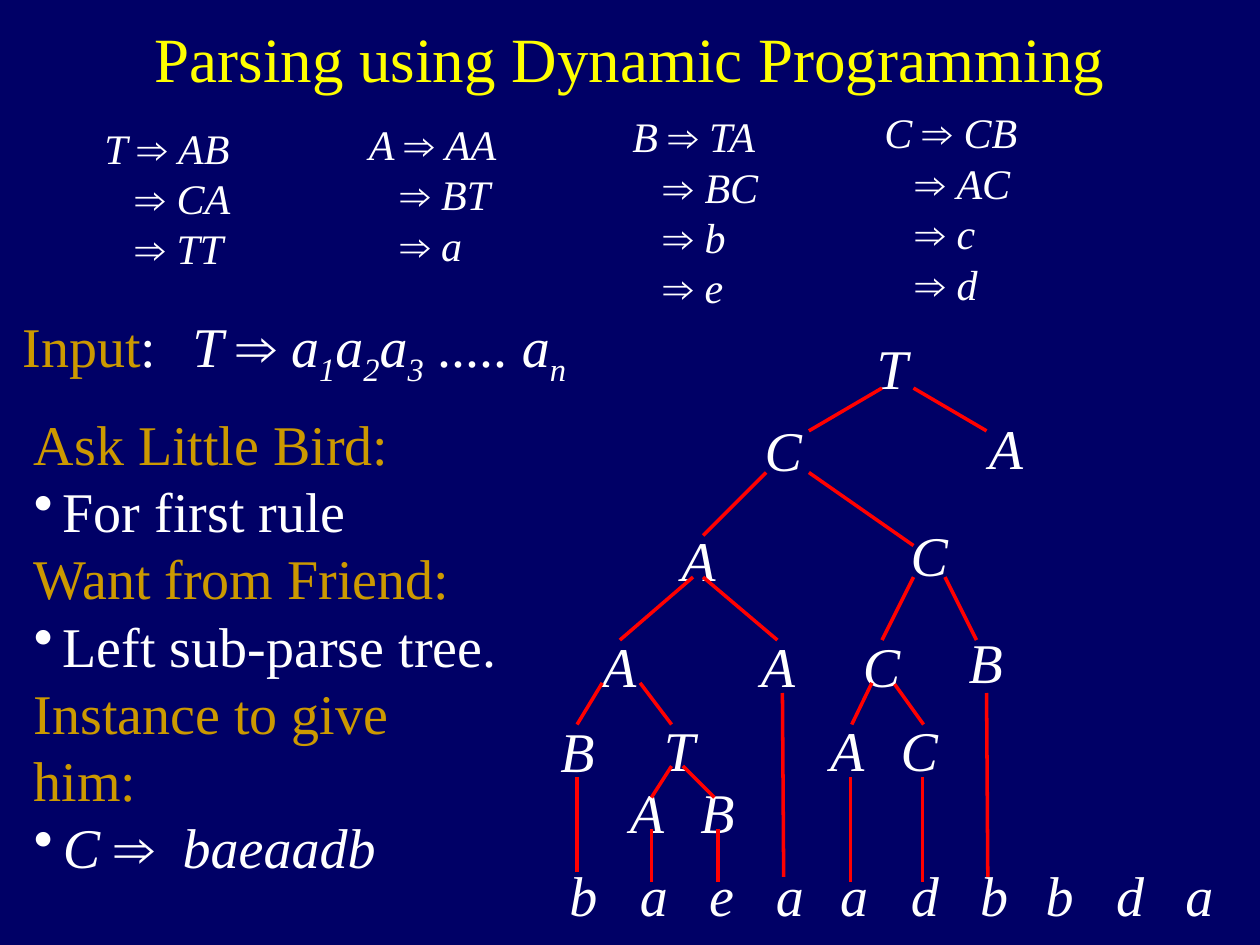
from typing import NamedTuple

from lxml import etree
from pptx import Presentation
from pptx.dml.color import RGBColor
from pptx.enum.shapes import MSO_CONNECTOR
from pptx.enum.text import MSO_ANCHOR, MSO_AUTO_SIZE, PP_ALIGN
from pptx.oxml.ns import qn
from pptx.util import Inches, Pt

STRAIGHT = MSO_CONNECTOR.STRAIGHT
LEFT, CENTER = PP_ALIGN.LEFT, PP_ALIGN.CENTER
NAVY = RGBColor(0x00, 0x00, 0x66)
WHITE = RGBColor(0xFF, 0xFF, 0xFF)
YELLOW = RGBColor(0xFF, 0xFF, 0x00)
GOLD = RGBColor(0xCC, 0x99, 0x00)
RED = RGBColor(0xFF, 0x00, 0x00)
FONT = "Times New Roman"


class Run(NamedTuple):
    text: str
    slant: bool = False
    color: RGBColor = WHITE
    sub: bool = False


class Para(NamedTuple):
    runs: list[Run]
    indent: float = 0
    bullet: bool = False
    tabs: tuple[float, ...] = ()


class Rule(NamedTuple):
    head: str
    bodies: list[str]
    left: float
    top: float
    width: float


class Node(NamedTuple):
    name: str
    left: float
    top: float


class Edge(NamedTuple):
    x1: float
    y1: float
    x2: float
    y2: float


class Leaves(NamedTuple):
    names: str
    left: float
    width: float
    tabs: tuple[float, ...]


def fill(frame, paras: list[Para], size: float = 32, align=LEFT) -> None:
    """Write formatted paragraphs into a text frame."""
    for i, para in enumerate(paras):
        p = frame.paragraphs[0] if i == 0 else frame.add_paragraph()
        p.alignment = align
        props = p._p.get_or_add_pPr()
        if para.indent:
            props.set("marL", str(Inches(para.indent)))
        if para.bullet:
            props.set("indent", str(-Inches(para.indent)))
            etree.SubElement(props, qn("a:buChar"), char="•")
        if para.tabs:
            stops = etree.SubElement(props, qn("a:tabLst"))
            for pos in para.tabs:
                etree.SubElement(stops, qn("a:tab"), pos=str(Inches(pos)), algn="l")
        for run in para.runs:
            r = p.add_run()
            r.text = run.text
            r.font.name = FONT
            r.font.size = Pt(size)
            r.font.italic = run.slant
            r.font.color.rgb = run.color
            if run.sub:
                r.font._element.set("baseline", "-25000")


def label(slide, paras: list[Para], left: float, top: float, width: float,
          height: float = 0.63, wrap: bool = False, **style) -> None:
    box = slide.shapes.add_textbox(Inches(left), Inches(top), Inches(width), Inches(height))
    box.text_frame.word_wrap = wrap
    box.text_frame.auto_size = MSO_AUTO_SIZE.SHAPE_TO_FIT_TEXT
    fill(box.text_frame, paras, **style)


def draw_rule(slide, rule: Rule) -> None:
    paras = []
    for i, body in enumerate(rule.bodies):
        runs = [Run("⇒ "), Run(body, True)]
        if i == 0:
            runs.insert(0, Run(rule.head + " ", True))
        paras.append(Para(runs, indent=0.25 if i else 0))
    label(slide, paras, rule.left, rule.top, rule.width,
          0.1 + 0.4 * len(paras), wrap=True, size=24)


def draw_node(slide, node: Node) -> None:
    width = {"T": 0.45, "C": 0.5}.get(node.name, 0.47)
    label(slide, [Para([Run(node.name, True)])], node.left, node.top, width)


def draw_edge(slide, edge: Edge) -> None:
    line = slide.shapes.add_connector(STRAIGHT, *(Inches(v) for v in edge))
    line.line.color.rgb = RED
    line.line.width = Pt(2)
    etree.SubElement(line._element.spPr, qn("a:effectLst"))


def draw_leaves(slide, row: Leaves) -> None:
    para = Para([Run("\t".join(row.names), True)], tabs=row.tabs)
    label(slide, [para], row.left, 6.78, row.width, wrap=True)


RULES = [
    Rule("T", ["AB", "CA", "TT"], 0.73, 0.92, 1.37),
    Rule("A", ["AA", "BT", "a"], 2.83, 0.89, 2.08),
    Rule("B", ["TA", "BC", "b", "e"], 4.92, 0.83, 2.08),
    Rule("C", ["CB", "AC", "c", "d"], 6.92, 0.8, 2.08),
]
NODES = [
    Node("T", 6.86, 2.6), Node("C", 5.97, 3.25), Node("A", 7.75, 3.23),
    Node("A", 5.31, 4.12), Node("C", 7.13, 4.08),
    Node("A", 4.68, 4.96), Node("A", 5.94, 4.96),
    Node("C", 6.75, 4.96), Node("B", 7.59, 4.93),
    Node("B", 4.35, 5.64), Node("T", 5.17, 5.63),
    Node("A", 6.49, 5.63), Node("C", 7.05, 5.63),
    Node("A", 4.9, 6.12), Node("B", 5.46, 6.12),
]
EDGES = [
    # Branches
    Edge(7, 3.08, 6.42, 3.42), Edge(7.25, 3.08, 7.83, 3.42),
    Edge(6.08, 3.75, 5.58, 4.25), Edge(6.42, 3.75, 7.25, 4.33),
    Edge(5.5, 4.58, 4.92, 5.08), Edge(5.58, 4.58, 6.17, 5.08),
    Edge(7.25, 4.58, 7, 5.08), Edge(7.5, 4.58, 7.75, 5.08),
    Edge(4.78, 5.42, 4.58, 5.75), Edge(5.08, 5.42, 5.33, 5.75),
    Edge(6.92, 5.42, 6.76, 5.75), Edge(7.1, 5.43, 7.33, 5.75),
    Edge(5.33, 6.08, 5.17, 6.33), Edge(5.42, 6.08, 5.67, 6.33),
    # Drops to the leaves
    Edge(4.58, 6.17, 4.58, 6.92), Edge(5.17, 6.58, 5.17, 7),
    Edge(5.7, 6.58, 5.7, 7), Edge(6.21, 5.5, 6.22, 6.96),
    Edge(6.75, 6.17, 6.75, 7), Edge(7.32, 6.17, 7.32, 7),
    Edge(7.83, 5.5, 7.84, 6.96),
]
LEAVES = [
    Leaves("baea", 4.42, 2.07, (0.56, 1.11, 1.64)),
    Leaves("adb", 6.57, 1.65, (0.56, 1.11)),
    Leaves("bda", 8.2, 1.65, (0.56, 1.11)),
]
STEPS = [
    ("Ask Little Bird:", [Run("For first rule")]),
    ("Want from Friend:", [Run("Left sub-parse tree.")]),
    ("Instance to give him:", [Run("C ", True), Run("⇒  "), Run("baeaadb", True)]),
]


def main() -> None:
    deck = Presentation()
    deck.slide_width, deck.slide_height = Inches(10), Inches(7.5)
    slide = deck.slides.add_slide(deck.slide_layouts[5])
    slide.background.fill.solid()
    slide.background.fill.fore_color.rgb = NAVY

    # Title
    title = slide.shapes.title
    title.left, title.top = Inches(0.75), Inches(-0.17)
    title.width, title.height = Inches(8.5), Inches(1.25)
    title.text_frame.vertical_anchor = MSO_ANCHOR.MIDDLE
    heading = Run("Parsing using Dynamic Programming", color=YELLOW)
    fill(title.text_frame, [Para([heading])], size=36, align=CENTER)

    # Grammar
    for rule in RULES:
        draw_rule(slide, rule)

    # Input string
    label(slide, [Para([Run("Input", color=GOLD), Run(":")])], 0.08, 2.42, 1.37)
    runs = [Run("T ", True), Run("⇒ ")]
    for mark in "123":
        runs += [Run("a", True), Run(mark, True, sub=True)]
    runs += [Run(" ..... "), Run("a", True), Run("n", True, sub=True)]
    label(slide, [Para(runs)], 1.32, 2.42, 3.38, align=CENTER)

    # Questions and answers
    paras = []
    for ask, reply in STEPS:
        paras += [Para([Run(ask, color=GOLD)]), Para(reply, 0.23, True)]
    label(slide, paras, 0.17, 3.2, 3.94, 3.3)

    # Parse tree
    for node in NODES:
        draw_node(slide, node)
    for edge in EDGES:
        draw_edge(slide, edge)
    for row in LEAVES:
        draw_leaves(slide, row)

    deck.save("out.pptx")


if __name__ == "__main__":
    main()
